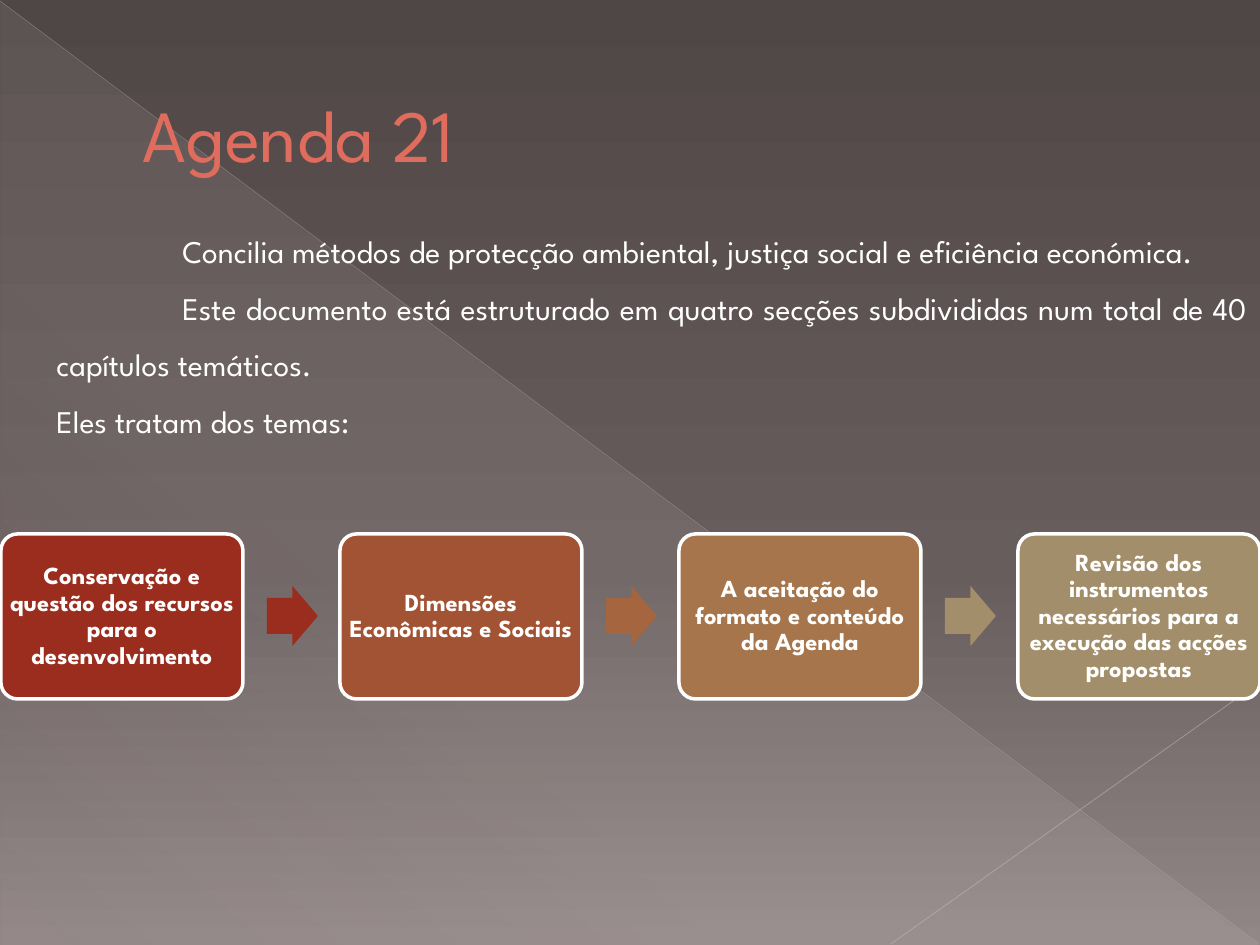
from lxml import etree
from pptx import Presentation
from pptx.dml.color import RGBColor
from pptx.enum.shapes import MSO_CONNECTOR, MSO_SHAPE
from pptx.enum.text import MSO_ANCHOR, PP_ALIGN
from pptx.oxml.ns import qn
from pptx.util import Pt

TRI, BOX, ARROW = MSO_SHAPE.RIGHT_TRIANGLE, MSO_SHAPE.ROUNDED_RECTANGLE, MSO_SHAPE.RIGHT_ARROW
LINE = MSO_CONNECTOR.STRAIGHT
MID, TOP = MSO_ANCHOR.MIDDLE, MSO_ANCHOR.TOP
LEFT, CENTER, FULL = PP_ALIGN.LEFT, PP_ALIGN.CENTER, PP_ALIGN.JUSTIFY

FONT = "League Spartan"
HEX = {
    "dark": "4F4646", "mid": "685D5D", "pale": "928787", "glow": "E9E5DC",
    "long": "C1BEBE", "short": "C7C5C5", "title": "DF6C5D", "edge": "B1B1B1",
    "white": "FFFFFF", "red": "9B2D1F", "rust": "A25333", "clay": "A4653F",
    "tan": "A6754B", "sand": "A28E6A",
}
# Theme text, box colour, colour of the arrow that follows
STEPS = [
    ("Conservação e questão dos recursos para o desenvolvimento", "red", "red"),
    ("Dimensões Econômicas e Sociais", "rust", "clay"),
    ("A aceitação do formato e conteúdo da Agenda", "tan", "sand"),
    ("Revisão dos instrumentos necessários para a execução das acções propostas", "sand", None),
]
PITCH = 339


def px(n):
    return round(n * 914400 / 126)


def rgb(name):
    return RGBColor.from_string(HEX[name])


def put(obj, vals):
    for key, val in vals.items():
        setattr(obj, key, val)


def tint(node, name, alpha=100):
    color = etree.SubElement(node, qn("a:srgbClr"), val=HEX[name])
    if alpha < 100:
        etree.SubElement(color, qn("a:alpha"), val=str(alpha * 1000))


def grade(fill, root, stops, angle):
    fill.gradient()
    fill.gradient_angle = 360 - angle
    group = next(root.iter(qn("a:gsLst")))
    for old in list(group):
        group.remove(old)
    for pos, name, alpha in stops:
        tint(etree.SubElement(group, qn("a:gs"), pos=str(pos * 1000)), name, alpha)


def shape(slide, kind, x, y, w, h, name=None):
    item = slide.shapes.add_shape(kind, px(x), px(y), px(w), px(h))
    item.shadow.inherit = False
    item.line.fill.background()
    if name:
        item.fill.solid()
        item.fill.fore_color.rgb = rgb(name)
    return item


def ray(slide, x1, y1, x2, y2, name, width, alpha):
    item = slide.shapes.add_connector(LINE, px(x1), px(y1), px(x2), px(y2))
    item.line.width = Pt(width)
    item.line.color.rgb = rgb(name)
    color = next(item._element.spPr.iter(qn("a:srgbClr")))
    etree.SubElement(color, qn("a:alpha"), val=str(alpha * 1000))
    etree.SubElement(item._element.spPr, qn("a:effectLst"))


def write(item, lines, frame, para, font, name):
    text = item.text_frame
    put(text, {"word_wrap": True, **frame})
    for i, line in enumerate(lines):
        p = text.paragraphs[0] if i == 0 else text.add_paragraph()
        put(p, para)
        run = p.add_run()
        run.text = line
        put(run.font, {"name": FONT, **font})
        run.font.color.rgb = rgb(name)
    return text.paragraphs


def label(slide, x, y, w, h, *rest):
    return write(slide.shapes.add_textbox(px(x), px(y), px(w), px(h)), *rest)


def scene(slide):
    grade(slide.background.fill, slide._element,
          [(0, "dark", 100), (60, "mid", 100), (100, "pale", 100)], 90)
    tri = shape(slide, TRI, 1, 2, 1258, 943)
    grade(tri.fill, tri._element,
          [(0, "glow", 10), (70, "glow", 8), (100, "glow", 1)], 133)
    ray(slide, 0, 1, 1259, 944, "long", 0.39, 35)
    ray(slide, 1260, 682, 891, 944, "short", 0.47, 45)


def words(slide):
    # Title with a thin outline
    head = label(slide, 63, 37, 1134, 193, ["Agenda 21"], {"vertical_anchor": MID},
                 {"alignment": LEFT}, {"size": Pt(42)}, "title")[0]
    head._p.get_or_add_pPr().set("marL", str(px(67)))
    edge = etree.Element(qn("a:ln"), w=str(Pt(0.5)))
    tint(etree.SubElement(edge, qn("a:solidFill")), "edge")
    head.runs[0].font._element.insert(0, edge)

    # Body: the first two paragraphs start one inch in
    body = label(slide, 44, 207, 1216, 292, [
        "Concilia métodos de protecção ambiental, justiça social e eficiência económica.",
        "Este documento está estruturado em quatro secções subdivididas num total de 40 "
        "capítulos temáticos.",
        "Eles tratam dos temas:",
    ], {"vertical_anchor": TOP}, {"alignment": FULL, "line_spacing": 1.5},
        {"size": Pt(18)}, "white")
    for p in body[:2]:
        p._p.get_or_add_pPr().set("indent", str(px(126)))


def flow(slide):
    sides = ("left", "right", "top", "bottom")
    frame = {"vertical_anchor": MID, **{"margin_" + side: px(3) for side in sides}}
    for i, (text, color, next_color) in enumerate(STEPS):
        x = i * PITCH
        box = shape(slide, BOX, x + 1, 534, 242, 165, color)
        box.adjustments[0] = 0.1
        box.line.width = Pt(2)
        box.line.color.rgb = rgb("white")
        write(box, [text], frame, {"alignment": CENTER, "line_spacing": 0.9},
              {"size": Pt(14), "bold": True}, "white")
        if next_color:
            arrow = shape(slide, ARROW, x + 267, 586, 51, 60, next_color)
            arrow.adjustments[0] = 0.6


def main():
    deck = Presentation()
    put(deck, {"slide_width": px(1260), "slide_height": px(945)})
    slide = deck.slides.add_slide(deck.slide_layouts[6])
    scene(slide)
    words(slide)
    flow(slide)
    deck.save("out.pptx")


if __name__ == "__main__":
    main()
